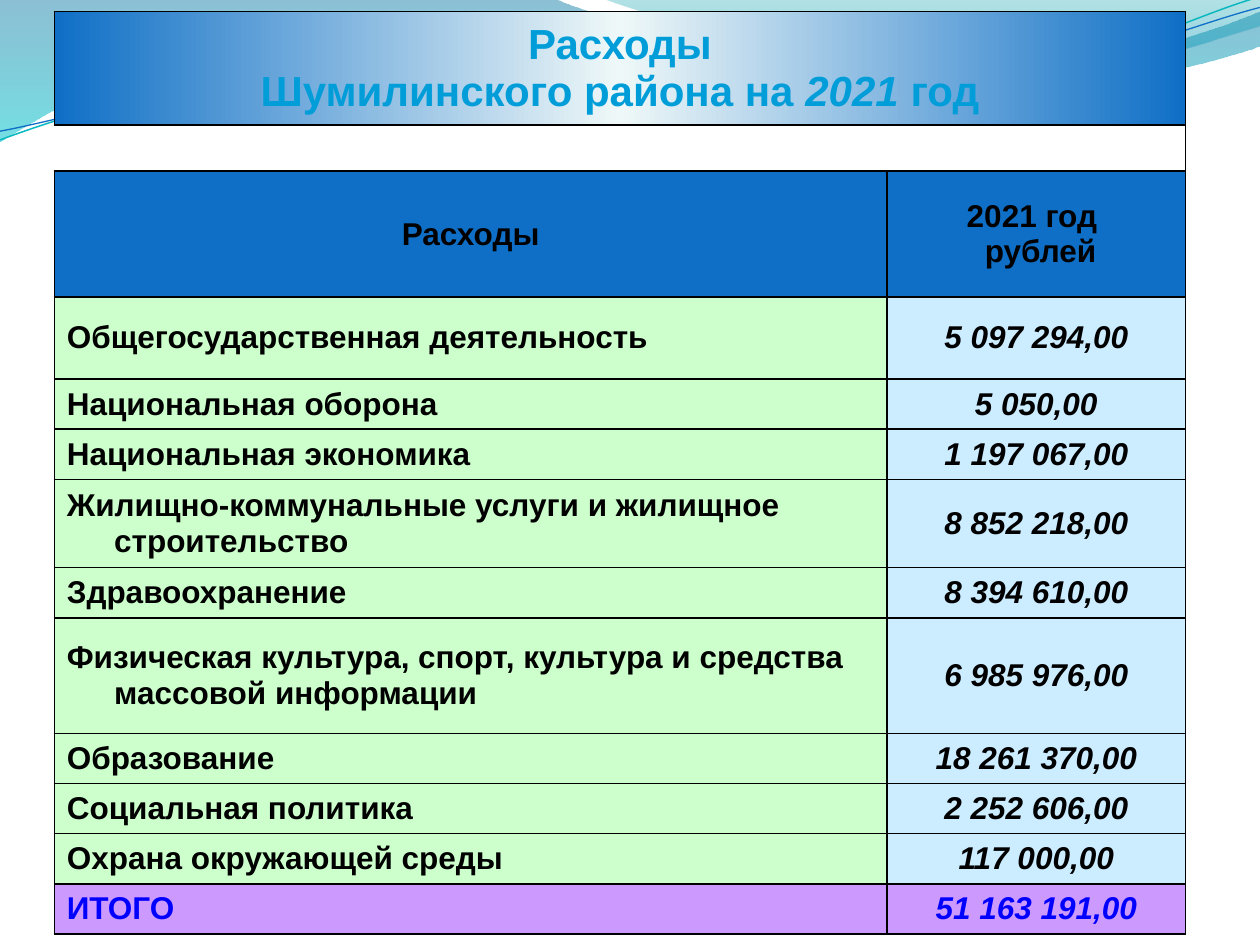
import math
import pptx
import pptx.util
import pptx.oxml
import pptx.oxml.ns
import pptx.dml.color
import pptx.enum.text

Pt = pptx.util.Pt
RGB = pptx.dml.color.RGBColor
ALIGN = pptx.enum.text.PP_ALIGN
BLACK = RGB(0x00, 0x00, 0x00)
BLUE = RGB(0x0F, 0x6F, 0xC6)
PALE = RGB(0xEF, 0xF8, 0xF8)
SKY = RGB(0x00, 0x9D, 0xD9)
GREEN = RGB(0xCC, 0xFF, 0xCC)
ICE = RGB(0xCC, 0xEC, 0xFF)
LILAC = RGB(0xCC, 0x99, 0xFF)
INK = RGB(0x00, 0x00, 0xFF)
TEAL = RGB(0x0A, 0xB8, 0xBF)
DEEP = RGB(0x00, 0x74, 0xA1)
CYAN = RGB(0x00, 0xC6, 0xCF)
SEA = RGB(0x00, 0xA1, 0xA9)
AZURE = RGB(0x00, 0x8B, 0xBF)
PLAIN = "{2D5ABB26-0587-4C30-8999-92F81FD0307C}"
TILT = -2.7
WIDTHS = [475.8, 170.7]
HEIGHTS = [64.8, 26.5, 72, 46.8, 28.7, 28.7, 50.4, 28.7, 66, 28.7, 28.7, 28.7, 28.7]
COSTS = [
    ("Общегосударственная деятельность", "5 097 294,00"),
    ("Национальная оборона", "5 050,00"),
    ("Национальная экономика", "1 197 067,00"),
    ("Жилищно-коммунальные услуги и жилищное строительство", "8 852 218,00"),
    ("Здравоохранение", "8 394 610,00"),
    ("Физическая культура, спорт, культура и средства массовой информации",
     "6 985 976,00"),
    ("Образование", "18 261 370,00"),
    ("Социальная политика", "2 252 606,00"),
    ("Охрана окружающей среды", "117 000,00"),
]
LEFT_WAVE = [
    (0, 0), (317, -0.7),
    (343, 12, 478, 45, 546, 45), (614, 45, 690, 19, 720, 6.5), (720.7, 26),
    (708, 32, 626, 55, 537, 54), (448, 54, 275, 20, 185, 24.5),
    (93, 26, 33, 60, -0.7, 81.4), (0, 0),
]
RIGHT_WAVE = [
    (345, -0.7), (366, 8, 491, 45, 554, 47), (616, 50, 692, 23, 720, 15),
    (720, 0), (345, -0.7),
]
TEAL_LINE = [
    (0, 80), (35, 67, 114, 41, 199, 37.5), (284, 34, 427, 64, 513, 57.5),
    (600, 51, 675, 11, 718.5, -1.4),
]
BLUE_LINE = [
    (0, 75), (34, 69, 118, 44, 204, 40.5), (290, 37, 430, 60.5, 516, 54),
    (602, 48, 677.5, 15, 720, 4.3),
]


def turn(point, angle, mid):
    """Turn a point about a centre by an angle in degrees."""
    dx, dy = point[0] - mid[0], point[1] - mid[1]
    sin, cos = math.sin(math.radians(angle)), math.cos(math.radians(angle))
    return mid[0] + dx * cos - dy * sin, mid[1] + dx * sin + dy * cos


def bend(shape, steps):
    """Join the line segments of each six-number step into one cubic curve."""
    qn = pptx.oxml.ns.qn
    lines = list(shape.element.iter(qn("a:lnTo")))
    for step in steps:
        part = [lines.pop(0) for _ in range(len(step) // 2)]
        if len(part) == 3:
            cubic = pptx.oxml.parse_xml(
                f'<a:cubicBezTo {pptx.oxml.ns.nsdecls("a")}/>')
            part[0].addprevious(cubic)
            for line in part:
                cubic.append(line.find(qn("a:pt")))
                line.getparent().remove(line)


def blend(stops, angle):
    """Make a linear gradient from (place, colour, opacity) stops."""
    marks = "".join(
        f'<a:gs pos="{pos * 1000}"><a:srgbClr val="{tint}">'
        f'<a:alpha val="{alpha * 1000}"/></a:srgbClr></a:gs>'
        for pos, tint, alpha in stops)
    return pptx.oxml.parse_xml(
        f'<a:gradFill {pptx.oxml.ns.nsdecls("a")} rotWithShape="1"><a:gsLst>{marks}'
        f'</a:gsLst><a:lin ang="{angle * 60000}" scaled="0"/></a:gradFill>')


def draw(slide, path, closed=False, tilt=0):
    """Add a curved outline without shadow."""
    pts = [step[i:i + 2] for step in path for i in range(0, len(step), 2)]
    mid = [(min(axis) + max(axis)) / 2 for axis in zip(*pts)]
    pts = [turn(point, -tilt, mid) for point in pts]
    pen = slide.shapes.build_freeform(Pt(pts[0][0]), Pt(pts[0][1]), scale=1.0)
    pen.add_line_segments([(Pt(x), Pt(y)) for x, y in pts[1:]], close=closed)
    shape = pen.convert_to_shape()
    bend(shape, path[1:])
    shape.rotation = tilt
    shape.shadow.inherit = False
    return shape


def wave(slide, path, stops):
    """Add a shaded wave."""
    shape = draw(slide, path, closed=True)
    shape.line.fill.background()
    geom = shape.element.spPr.find(pptx.oxml.ns.qn("a:custGeom"))
    geom.addnext(blend(stops, 90))


def curve(slide, path, tint, width):
    """Add a thin curved line."""
    shape = draw(slide, path, tilt=TILT)
    shape.fill.background()
    shape.line.color.rgb = tint
    shape.line.width = Pt(width)


def edge(cell, sides="LRTB"):
    """Rule the named sides of a cell and clear the others."""
    props = cell._tc.get_or_add_tcPr()
    for side in "LRTB":
        paint = (f'<a:solidFill><a:srgbClr val="{BLACK}"/></a:solidFill>'
                 if side in sides else "<a:noFill/>")
        props.append(pptx.oxml.parse_xml(
            f'<a:ln{side} {pptx.oxml.ns.nsdecls("a")} w="{Pt(1)}">{paint}</a:ln{side}>'))


def write(cell, lines, size=18, tint=BLACK, align=ALIGN.CENTER, slant=False):
    """Write lines in a cell, each a string or a list of (text, italic) runs."""
    cell.vertical_anchor = pptx.enum.text.MSO_ANCHOR.MIDDLE
    frame = cell.text_frame
    for i, line in enumerate(lines):
        par = frame.add_paragraph() if i else frame.paragraphs[0]
        par.alignment = align
        props = par._p.get_or_add_pPr()
        props.set("marL", str(Pt(27)))
        props.set("indent", str(Pt(-27)))
        for text, lean in [(line, slant)] if isinstance(line, str) else line:
            run = par.add_run()
            run.text = text
            font = run.font
            font.name, font.size, font.bold, font.italic = "Arial", Pt(size), True, lean
            font.color.rgb = tint


def entry(cell, lines, fill, **style):
    """Fill a ruled cell with colour and text."""
    edge(cell)
    cell.fill.solid()
    cell.fill.fore_color.rgb = fill
    write(cell, lines, **style)


def grid(slide):
    """Add the bare table with its row and column sizes."""
    frame = slide.shapes.add_table(len(HEIGHTS), 2, Pt(31), Pt(6.5),
                                   Pt(sum(WIDTHS)), Pt(sum(HEIGHTS)))
    table = frame.table
    table.first_row = table.horz_banding = False
    table._tbl.tblPr.find(pptx.oxml.ns.qn("a:tableStyleId")).text = PLAIN
    for col, width in zip(table.columns, WIDTHS):
        col.width = Pt(width)
    for row, height in zip(table.rows, HEIGHTS):
        row.height = Pt(height)
    return table


def title(table):
    """Fill the merged title row and the gap below it."""
    head = table.cell(0, 0)
    head.merge(table.cell(0, 1))
    for cell in table.rows[0].cells:
        edge(cell)
    stops = [(0, BLUE, 100), (50, PALE, 100), (100, BLUE, 100)]
    head._tc.get_or_add_tcPr().append(blend(stops, 0))
    lines = ["Расходы",
             [("Шумилинского района на ", False), ("2021 ", True), ("год", False)]]
    write(head, lines, size=24, tint=SKY)
    for cell, sides in zip(table.rows[1].cells, ("TB", "RTB")):
        cell.margin_top = cell.margin_bottom = 0
        edge(cell, sides)


def main():
    """Build and save the slide."""
    deck = pptx.Presentation()
    deck.slide_width, deck.slide_height = Pt(720), Pt(540)
    slide = deck.slides.add_slide(deck.slide_layouts[6])
    wave(slide, LEFT_WAVE, [(0, DEEP, 45), (100, CYAN, 55)])
    wave(slide, RIGHT_WAVE, [(0, SEA, 30), (80, AZURE, 45)])
    curve(slide, TEAL_LINE, TEAL, 0.85)
    curve(slide, BLUE_LINE, BLUE, 0.75)
    table = grid(slide)
    title(table)
    entry(table.cell(2, 0), ["Расходы"], BLUE)
    entry(table.cell(2, 1), ["2021 год ", " рублей"], BLUE)
    rows = [(*cost, GREEN, ICE, BLACK) for cost in COSTS]
    rows.append(("ИТОГО", "51 163 191,00", LILAC, LILAC, INK))
    for i, (name, cost, left, right, tint) in enumerate(rows, 3):
        entry(table.cell(i, 0), [name], left, tint=tint, align=ALIGN.LEFT)
        entry(table.cell(i, 1), [cost], right, tint=tint, slant=True)
    deck.save("out.pptx")


if __name__ == "__main__":
    main()
